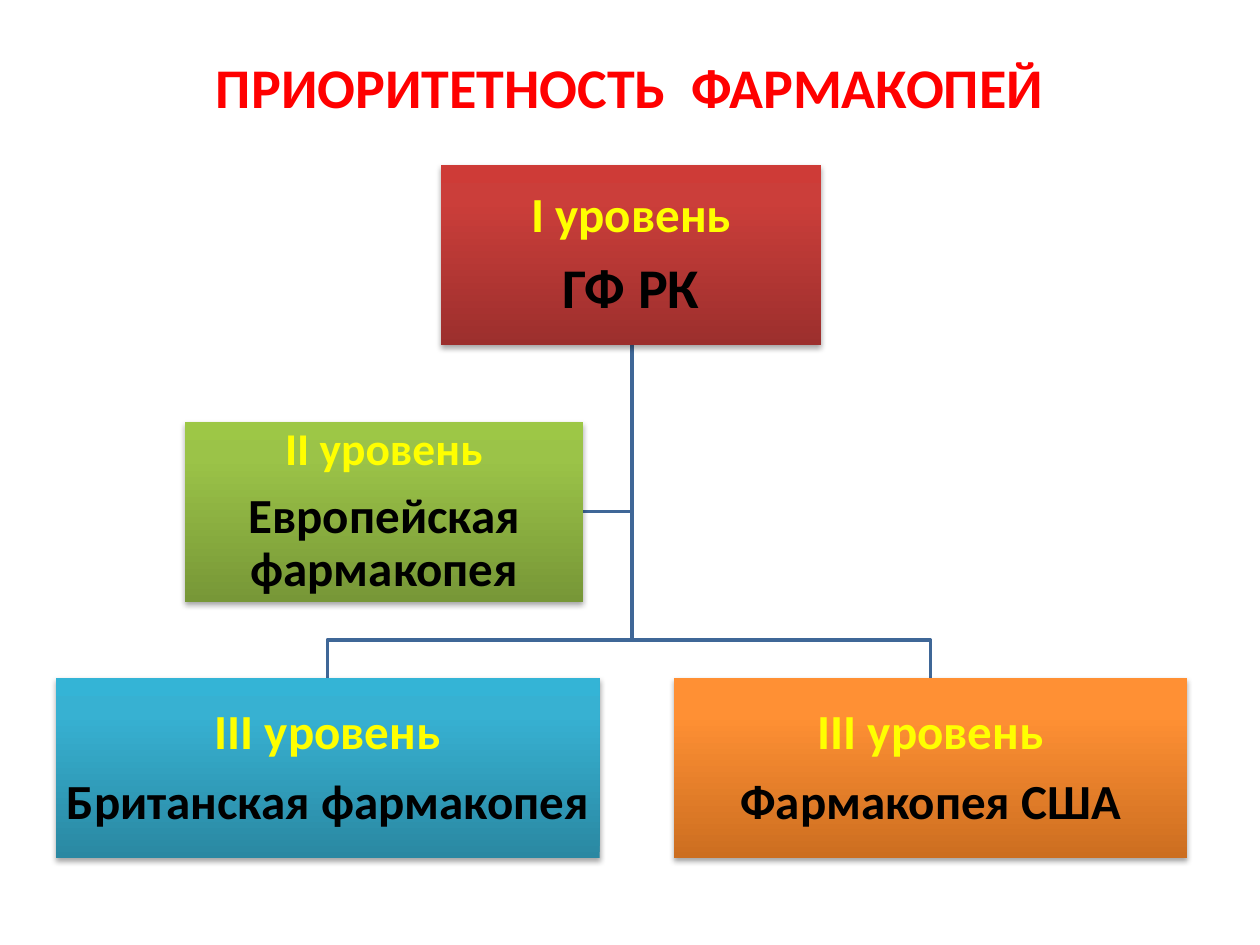
import pptx
import pptx.util
import pptx.dml.color
import pptx.enum.shapes
import pptx.enum.text
import pptx.oxml
import pptx.oxml.ns
from copy import deepcopy

Cm, Pt = pptx.util.Cm, pptx.util.Pt
TOP, STEP, HEIGHT = 3.33, 5.17, 3.63
TRUNK, BUS = 12.74, 12.9

SHADOW = (
    f'<a:effectLst {pptx.oxml.ns.nsdecls("a")}>'
    '<a:outerShdw blurRad="40000" dist="23000" dir="5400000" rotWithShape="0">'
    '<a:srgbClr val="000000"><a:alpha val="35000"/></a:srgbClr>'
    '</a:outerShdw></a:effectLst>'
)


def color(value):
    return pptx.dml.color.RGBColor.from_string(value)


class Chart:
    font = "Calibri"
    line = "3F6797"
    level = "FFFF00"
    text = "000000"

    def __init__(self, prs):
        self.s = prs.slides.add_slide(prs.slide_layouts[5])

    def paragraph(self, p, text, size, value):
        p.text = text
        p.alignment = pptx.enum.text.PP_ALIGN.CENTER
        f = p.font
        f.name, f.size, f.bold = self.font, Pt(size), True
        f.color.rgb = color(value)

    def title(self, text):
        sp = self.s.shapes.title
        sp.left, sp.top, sp.width, sp.height = Cm(1.27), Cm(0.76), Cm(22.86), Cm(1.96)
        sp.text_frame.vertical_anchor = pptx.enum.text.MSO_ANCHOR.MIDDLE
        self.paragraph(sp.text_frame.paragraphs[0], text, 32, "FF0000")

    def link(self, *points):
        start, *rest = [(Cm(x), Cm(y)) for x, y in points]
        fb = self.s.shapes.build_freeform(*start)
        fb.add_line_segments(rest, close=False)
        sp = fb.convert_to_shape()
        sp.shadow.inherit = False
        sp.fill.background()
        sp.line.color.rgb = color(self.line)
        sp.line.width = Pt(2)

    def gradient(self, sp, colors):
        sp.fill.gradient()
        sp.fill.gradient_angle = 90
        first = sp.element.spPr.find(".//" + pptx.oxml.ns.qn("a:gs"))
        first.addnext(deepcopy(first))
        for stop, position, value in zip(sp.fill.gradient_stops, (0, 0.8, 1), colors):
            stop.position = position
            stop.color.rgb = color(value)

    def box(self, left, row, width, colors, lines):
        sp = self.s.shapes.add_shape(
            pptx.enum.shapes.MSO_SHAPE.RECTANGLE,
            Cm(left), Cm(TOP + row * STEP), Cm(width), Cm(HEIGHT))
        self.gradient(sp, colors)
        sp.line.fill.background()
        sp.element.spPr.append(pptx.oxml.parse_xml(SHADOW))
        tf = sp.text_frame
        tf.word_wrap = True
        tf.vertical_anchor = pptx.enum.text.MSO_ANCHOR.MIDDLE
        tf.margin_left = tf.margin_right = tf.margin_top = tf.margin_bottom = Cm(0.05)
        for i, ((text, size), value) in enumerate(zip(lines, (self.level, self.text))):
            p = tf.add_paragraph() if i else tf.paragraphs[0]
            self.paragraph(p, text, size, value)
            p.line_spacing = 0.9
            p.space_after = Pt(size * 0.35)


def main():
    prs = pptx.Presentation()
    prs.slide_width, prs.slide_height = Cm(25.4), Cm(19.05)
    chart = Chart(prs)
    chart.title("ПРИОРИТЕТНОСТЬ  ФАРМАКОПЕЙ")

    start = (TRUNK, TOP + HEIGHT)
    side = TOP + STEP + HEIGHT / 2
    chart.link(start, (TRUNK, side), (11.76, side))
    for x in (18.76, 6.6):
        chart.link(start, (TRUNK, BUS), (x, BUS), (x, TOP + 2 * STEP))

    boxes = [
        (8.89, 0, 7.67, ("9C2F2D", "CB3E3A", "CE3B37"),
         (("I уровень", 28), ("ГФ РК", 32))),
        (1.12, 2, 10.97, ("2A88A2", "37B1D2", "34B4D6"),
         (("III уровень", 28), ("Британская фармакопея", 28))),
        (13.59, 2, 10.34, ("CC6E20", "FF9034", "FF9136"),
         (("III уровень", 28), ("Фармакопея США", 28))),
        (3.73, 1, 8.03, ("779737", "9BC348", "9DC746"),
         (("II уровень", 26), ("Европейская фармакопея", 28))),
    ]
    for box in boxes:
        chart.box(*box)
    prs.save("out.pptx")


if __name__ == "__main__":
    main()
